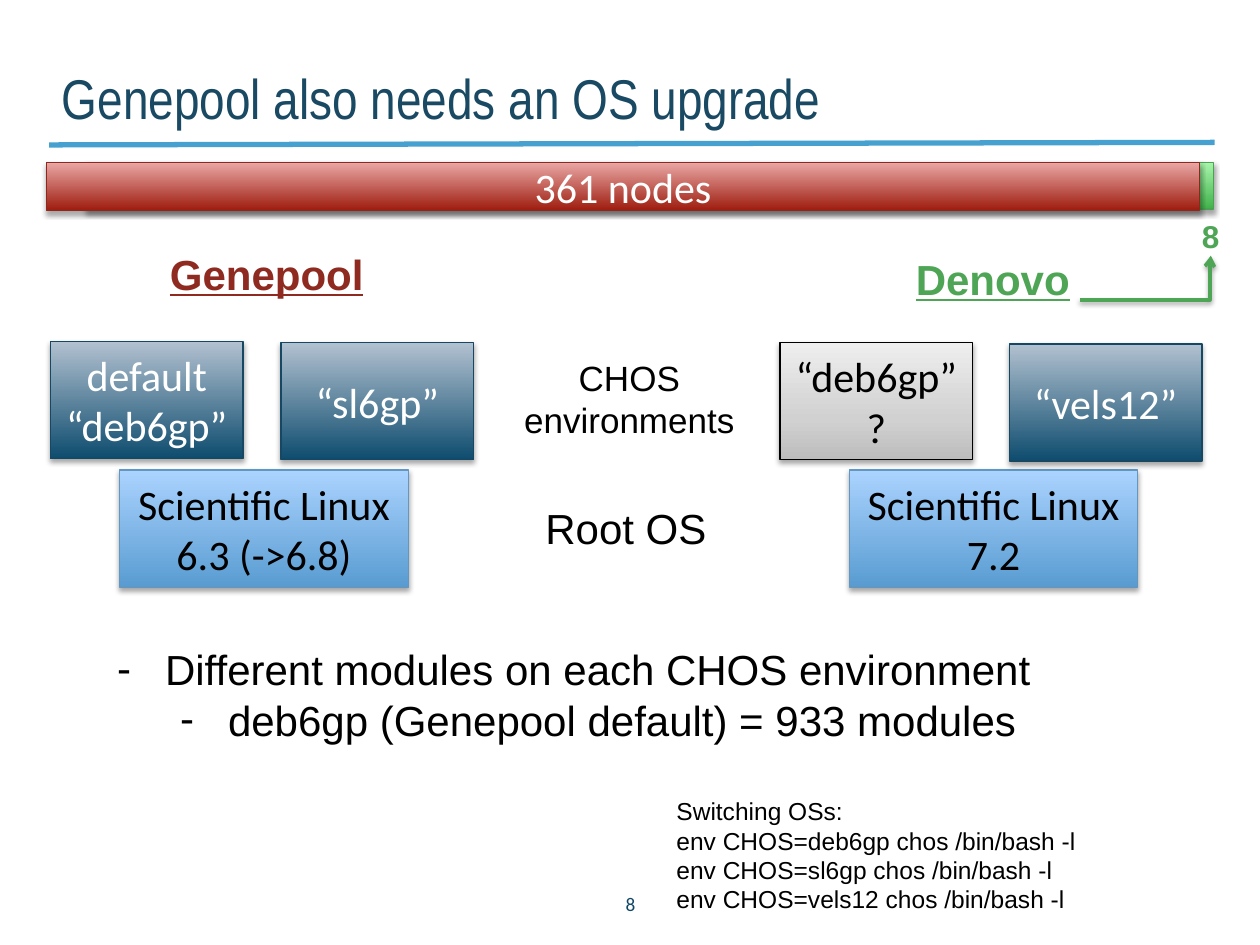
from copy import deepcopy
from lxml import etree
from pptx import Presentation
from pptx.dml.color import RGBColor
from pptx.enum.shapes import MSO_CONNECTOR, MSO_SHAPE
from pptx.enum.text import MSO_ANCHOR, MSO_AUTO_SIZE, PP_ALIGN
from pptx.oxml.ns import qn
from pptx.util import Inches, Pt

RECT = MSO_SHAPE.RECTANGLE
STRAIGHT, ELBOW = MSO_CONNECTOR.STRAIGHT, MSO_CONNECTOR.ELBOW
LEFT, CENTER = PP_ALIGN.LEFT, PP_ALIGN.CENTER
TOP, MIDDLE, BOTTOM = MSO_ANCHOR.TOP, MSO_ANCHOR.MIDDLE, MSO_ANCHOR.BOTTOM
NONE, GROW = MSO_AUTO_SIZE.NONE, MSO_AUTO_SIZE.SHAPE_TO_FIT_TEXT
rgb = RGBColor.from_string


def write(s, lines, size, name, color, align=LEFT, anchor=TOP, **extra):
    tf = s.text_frame
    tf.vertical_anchor = anchor
    for i, line in enumerate(lines):
        p = tf.paragraphs[0] if i == 0 else tf.add_paragraph()
        p.alignment = align
        p.space_before = Pt(0)
        r = p.add_run()
        r.text = line
        r.font.color.rgb = rgb(color)
        for key, value in dict(size=Pt(size), name=name, **extra).items():
            setattr(r.font, key, value)


def add_shadow(s, opacity, dist):
    spPr = s.element.spPr
    for old in spPr.findall(qn("a:effectLst")):
        spPr.remove(old)
    effects = etree.SubElement(spPr, qn("a:effectLst"))
    if opacity:
        shadow = etree.SubElement(
            effects, qn("a:outerShdw"), blurRad=str(Pt(3.1)), dist=str(Pt(dist)),
            dir="5400000", rotWithShape="0")
        black = etree.SubElement(shadow, qn("a:srgbClr"), val="000000")
        etree.SubElement(black, qn("a:alpha"), val=str(opacity * 1000))


prs = Presentation()
prs.slide_width, prs.slide_height = Inches(10), Inches(7.5)
slide = prs.slides.add_slide(prs.slide_layouts[1])
shapes = slide.shapes
title, body = slide.placeholders

rule = shapes.add_connector(STRAIGHT, Inches(0.39), Inches(1.15), Inches(9.64), Inches(1.13))
rule.line.color.rgb = rgb("46A0D0")
rule.line.width = Pt(3)
add_shadow(rule, 0, 0)

for s, box in ((title, (0.39, 0.2, 7.46, 0.84)), (body, (0.83, 5.06, 7.52, 0.91))):
    s.left, s.top, s.width, s.height = map(Inches, box)
    s.text_frame.auto_size = NONE

tf = title.text_frame
tf.margin_top = tf.margin_bottom = 0
write(title, ["Genepool also needs an OS upgrade"], 32, "Arial Narrow", "194963", anchor=BOTTOM)
pPr = tf.paragraphs[0]._p.get_or_add_pPr()
pPr.set("marL", str(Inches(0.25)))
pPr.set("indent", str(Inches(-0.25)))

write(body, ["Different modules on each CHOS environment",
             "deb6gp (Genepool default) = 933 modules"], 24, "Arial", "000000")
for level, p in enumerate(body.text_frame.paragraphs):
    p.level = level
    pPr = p._p.get_or_add_pPr()
    pPr.set("marL", str(Inches(0.38 + 0.5 * level)))
    pPr.set("indent", str(Inches(-0.38)))
    etree.SubElement(pPr, qn("a:buFont"), typeface="Arial")
    etree.SubElement(pPr, qn("a:buChar"), char="-")

GREEN = dict(stops=[(0, "42B24B"), (1, "A7F4AB")], line="4BA352", text="FFFFFF")
RED = dict(stops=[(0, "9E1D0F"), (1, "E9A7A5")], line="8E271D", text="FFFFFF")
NAVY = dict(stops=[(0, "0E4C6E"), (1, "B2C1D0")], line="174863", text="FFFFFF")
SKY = dict(stops=[(0, "599CD1"), (1, "ABD3FF")], line="6297C1", text="000000")
GRAY = dict(stops=[(0, "BDBDBD"), (0.35, "D1D1D1"), (1, "EEEEEE")], line="000000", text="000000")

boxes = [
    (0.69, 1.29, 8.94, 0.37, GREEN, ""),
    (0.4, 2.71, 1.53, 0.93, NAVY, "default “deb6gp”"),
    (0.95, 3.73, 2.29, 0.93, SKY, "Scientific Linux 6.3 (->6.8)"),
    (2.23, 2.72, 1.53, 0.93, NAVY, "“sl6gp”"),
    (6.19, 2.72, 1.53, 0.93, GRAY, "“deb6gp”?"),
    (6.74, 3.73, 2.29, 0.93, SKY, "Scientific Linux 7.2"),
    (8.01, 2.73, 1.53, 0.93, NAVY, "“vels12”"),
    (0.37, 1.29, 9.15, 0.38, RED, "361 nodes"),
]
for *box, look, text in boxes:
    s = shapes.add_shape(RECT, *map(Inches, box))
    s.fill.gradient()
    s.fill.gradient_angle = 90
    gsLst = s.element.spPr.find(".//" + qn("a:gsLst"))
    for _ in look["stops"][2:]:
        gsLst.insert(1, deepcopy(gsLst[0]))
    for stop, (position, color) in zip(s.fill.gradient_stops, look["stops"]):
        stop.position = position
        stop.color.rgb = rgb(color)
    s.line.color.rgb = rgb(look["line"])
    s.line.width = Pt(0.75)
    add_shadow(s, 35, 1.8)
    if text:
        write(s, [text], 24, "Calibri", look["text"], CENTER, MIDDLE)

HEADING = dict(bold=True, underline=True)
labels = [
    (5.27, 6.27, 3.39, 1.04, 14, "000000", LEFT, {},
     ["Switching OSs:", *(f"env CHOS={env} chos /bin/bash -l" for env in ("deb6gp", "sl6gp", "vels12"))]),
    (4.23, 3.94, 1.49, 0.5, 24, "000000", LEFT, {}, ["Root OS"]),
    (1.25, 1.92, 1.75, 0.5, 24, "8E2A20", LEFT, HEADING, ["Genepool"]),
    (7.17, 1.96, 1.44, 0.5, 24, "4FA556", LEFT, HEADING, ["Denovo"]),
    (4.05, 2.78, 1.89, 0.77, 20, "000000", CENTER, {}, ["CHOS", "environments"]),
    (9.44, 1.67, 0.34, 0.4, 18, "4FA556", LEFT, dict(bold=True), ["8"]),
]
for *box, size, color, align, extra, lines in labels:
    s = shapes.add_textbox(*map(Inches, box))
    s.text_frame.word_wrap = False
    s.text_frame.auto_size = GROW
    write(s, lines, size, "Arial", color, align, **extra)

number = shapes.add_textbox(Inches(4.5), Inches(6.97), Inches(1.01), Inches(0.4))
number.text_frame.word_wrap = True
write(number, ["8"], 11, "Calibri", "114766", CENTER, MIDDLE)

arrow = shapes.add_connector(ELBOW, Inches(8.57), Inches(2.38), Inches(9.61), Inches(2.03))
arrow.line.color.rgb = rgb("4FA556")
arrow.line.width = Pt(2)
etree.SubElement(arrow.line._get_or_add_ln(), qn("a:tailEnd"), type="arrow")
geom = arrow.element.spPr.find(qn("a:prstGeom"))
etree.SubElement(geom.find(qn("a:avLst")), qn("a:gd"), name="adj1", fmla="val 99200")
add_shadow(arrow, 38, 1.6)

prs.save("out.pptx")
